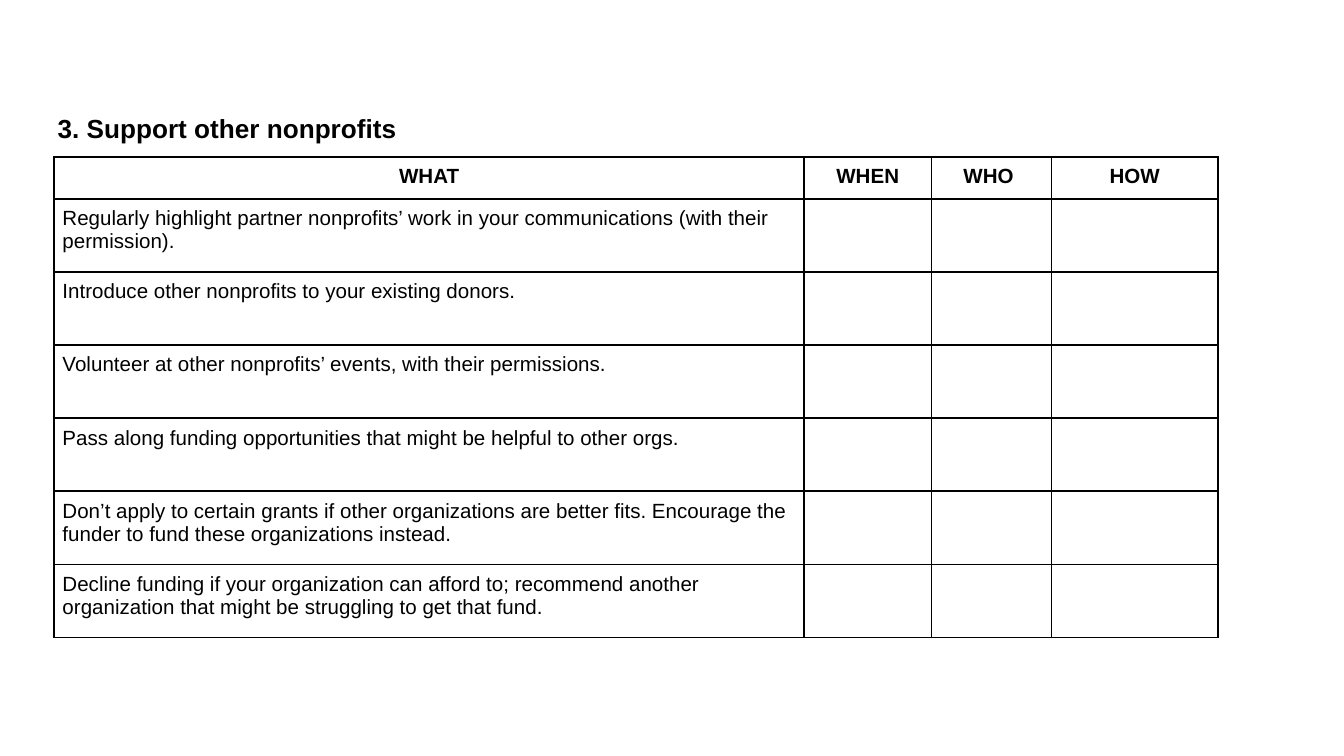
from lxml import etree
from pptx import Presentation
from pptx.dml.color import RGBColor
from pptx.enum import text as t
from pptx.oxml.ns import qn
from pptx.util import Pt

BLACK = RGBColor(0, 0, 0)
FONT = "Arial"
HEADS = ["WHAT", "WHEN", "WHO ", "HOW"]
TASKS = [
    "Regularly highlight partner nonprofits’ work in your communications (with their permission).",
    "Introduce other nonprofits to your existing donors.",
    "Volunteer at other nonprofits’ events, with their permissions.",
    "Pass along funding opportunities that might be helpful to other orgs.",
    "Don’t apply to certain grants if other organizations are better fits. "
    "Encourage the funder to fund these organizations instead.",
    "Decline funding if your organization can afford to; recommend another "
    "organization that might be struggling to get that fund.",
]
WIDTHS = [401.8, 68.2, 64.4, 89.2]
HEAD_H, ROW_H = 22.5, 39.2


def style(para, size, bold):
    for run in para.runs:
        run.font.name = FONT
        run.font.size = Pt(size)
        run.font.bold = bold
        run.font.color.rgb = BLACK


def border(cell):
    props = cell._tc.get_or_add_tcPr()
    for side in ("a:lnL", "a:lnR", "a:lnT", "a:lnB"):
        line = etree.SubElement(props, qn(side), w=str(Pt(1)))
        fill = etree.SubElement(line, qn("a:solidFill"))
        etree.SubElement(fill, qn("a:srgbClr"), val=str(BLACK))


prs = Presentation()
prs.slide_width, prs.slide_height = Pt(720), Pt(405)
slide = prs.slides.add_slide(prs.slide_layouts[6])

# Title
box = slide.shapes.add_textbox(Pt(23.8), Pt(60), Pt(196.6), Pt(17.3))
frame = box.text_frame
frame.word_wrap = False
frame.auto_size = t.MSO_AUTO_SIZE.SHAPE_TO_FIT_TEXT
frame.vertical_anchor = t.MSO_ANCHOR.MIDDLE
frame.margin_top = frame.margin_bottom = 0
frame.text = "3. Support other nonprofits"
style(frame.paragraphs[0], 14, True)

# Action table
rows = [HEADS] + [[task, "", "", ""] for task in TASKS]
height = HEAD_H + ROW_H * len(TASKS)
table = slide.shapes.add_table(len(rows), len(HEADS), Pt(29), Pt(84),
                               Pt(sum(WIDTHS)), Pt(height)).table
table.horz_banding = False
for col, width in zip(table.columns, WIDTHS):
    col.width = Pt(width)
for r, words in enumerate(rows):
    head = r == 0
    table.rows[r].height = Pt(HEAD_H if head else ROW_H)
    for c, word in enumerate(words):
        cell = table.cell(r, c)
        cell.margin_left = cell.margin_right = Pt(4.5)
        cell.margin_top = cell.margin_bottom = Pt(4.5)
        border(cell)
        cell.fill.background()
        cell.text_frame.text = word
        para = cell.text_frame.paragraphs[0]
        para.alignment = t.PP_ALIGN.CENTER if head else t.PP_ALIGN.LEFT
        style(para, 11, head)

prs.save("out.pptx")
